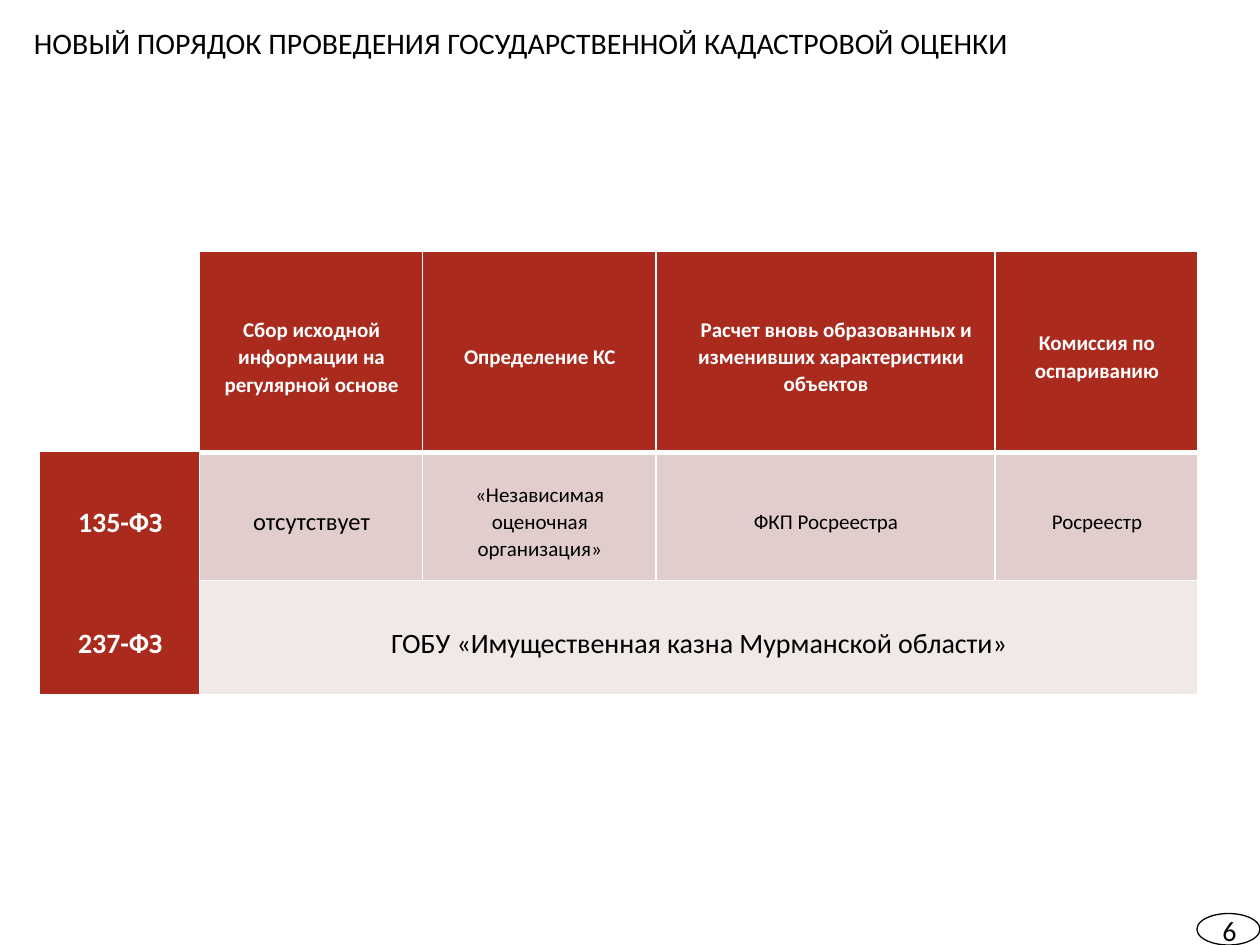
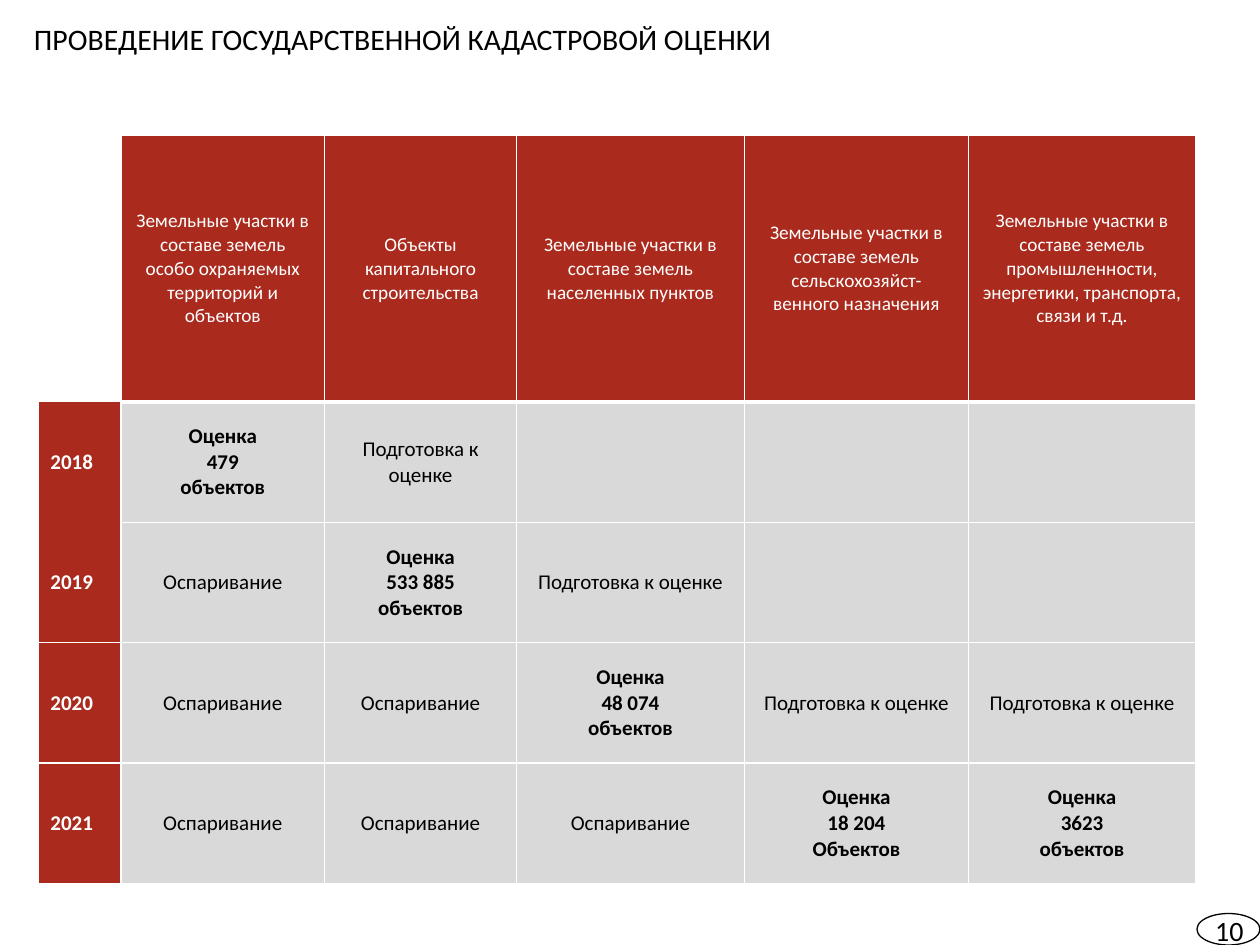
"""Build two table slides on the state cadastral valuation."""
from dataclasses import dataclass

from lxml.etree import SubElement
from pptx import Presentation
from pptx.dml.color import RGBColor
from pptx.enum.shapes import MSO_SHAPE
from pptx.enum.text import MSO_ANCHOR, MSO_AUTO_SIZE, PP_ALIGN
from pptx.oxml import parse_xml
from pptx.oxml.ns import nsdecls, qn
from pptx.util import Pt

PLAIN_TABLE_STYLE = "{2D5ABB26-0587-4C30-8999-92F81FD0307C}"


@dataclass(frozen=True)
class Theme:
    font: str = "Calibri"
    ink: str = "000000"
    paper: str = "FFFFFF"
    accent: str = "AA2B1E"
    rose: str = "E2CDCD"
    pale_rose: str = "F1E8E8"
    gray: str = "D9D9D9"
    title: int = 17
    number: int = 16
    large: int = 16
    medium: int = 14
    body: int = 12
    small: int = 11


@dataclass(frozen=True)
class CellStyle:
    fill: str
    color: str
    size: int
    bold: bool = False
    align: PP_ALIGN = PP_ALIGN.CENTER


class SlideBuilder:
    def __init__(self, deck, theme):
        self.deck = deck
        self.theme = theme
        self.page = None

    def format_text(self, frame, size, color, bold=False, align=PP_ALIGN.CENTER, spacing=None):
        for para in frame.paragraphs:
            para.alignment = align
            if spacing:
                para.line_spacing = spacing
            for span in para.runs:
                span.font.name = self.theme.font
                span.font.size = Pt(size)
                span.font.bold = bold
                span.font.color.rgb = RGBColor.from_string(color)

    def set_margins(self, target, margins):
        left, top, right, bottom = (Pt(margin) for margin in margins)
        target.margin_left, target.margin_top = left, top
        target.margin_right, target.margin_bottom = right, bottom

    def add_page(self, title, title_top, number):
        self.page = self.deck.slides.add_slide(self.deck.slide_layouts[5])
        box = self.page.shapes.title
        box.left, box.top, box.width, box.height = Pt(19.4), Pt(title_top), Pt(606), Pt(25.2)
        frame = box.text_frame
        frame.text = title
        frame.auto_size = MSO_AUTO_SIZE.NONE
        frame.vertical_anchor = MSO_ANCHOR.BOTTOM
        self.set_margins(frame, (0, 3.6, 0, 0))
        self.format_text(frame, self.theme.title, self.theme.ink, align=PP_ALIGN.LEFT)
        self.add_number(number)

    def add_number(self, number):
        oval = self.page.shapes.add_shape(MSO_SHAPE.OVAL, Pt(684), Pt(522), Pt(36), Pt(18))
        oval.shadow.inherit = False
        oval.fill.background()
        oval.line.color.rgb = RGBColor.from_string(self.theme.ink)
        oval.line.width = Pt(0.75)
        box = self.page.shapes.add_textbox(Pt(684.5), Pt(521.5), Pt(36), Pt(19.5))
        frame = box.text_frame
        frame.word_wrap = True
        frame.text = str(number)
        frame.vertical_anchor = MSO_ANCHOR.BOTTOM
        self.set_margins(frame, (0, 0, 0, 0))
        self.format_text(frame, self.theme.number, self.theme.ink)

    def add_table(self, left, top, widths, heights):
        frame = self.page.shapes.add_table(
            len(heights), len(widths), Pt(left), Pt(top), Pt(sum(widths)), Pt(sum(heights)))
        table = frame.table
        table.first_row = table.horz_banding = False
        properties = table._tbl.tblPr
        style = properties.find(qn("a:tableStyleId"))
        if style is None:
            style = SubElement(properties, qn("a:tableStyleId"))
        style.text = PLAIN_TABLE_STYLE
        for column, width in zip(table.columns, widths):
            column.width = Pt(width)
        for row, height in zip(table.rows, heights):
            row.height = Pt(height)
        return table

    def border(self, cell, edges):
        properties = cell._tc.get_or_add_tcPr()
        for index, (edge, width) in enumerate(edges.items()):
            properties.insert(index, parse_xml(
                f'<a:ln{edge} {nsdecls("a")} w="{Pt(width)}"><a:solidFill>'
                f'<a:srgbClr val="{self.theme.paper}"/></a:solidFill></a:ln{edge}>'))

    def fill_table(self, table, rows, style_of, margins, spacing=None):
        for row, texts in enumerate(rows):
            for column, text in enumerate(texts):
                if row == column == 0:
                    continue
                cell = table.cell(row, column)
                style = style_of(row, column, text)
                cell.text_frame.text = text
                cell.vertical_anchor = MSO_ANCHOR.MIDDLE
                self.set_margins(cell, margins)
                cell.fill.solid()
                cell.fill.fore_color.rgb = RGBColor.from_string(style.fill)
                self.format_text(cell.text_frame, style.size, style.color,
                                 style.bold, style.align, spacing)
                edges = {"L": 1, "R": 1, "T": 3 if row == 1 else 1, "B": 3 if row == 0 else 1}
                if column == 0 and row in (1, 2):
                    del edges["B" if row == 1 else "T"]
                if column == 0 and row == 1:
                    del edges["T"]
                self.border(cell, edges)


def add_procedure_slide(builder):
    theme = builder.theme
    builder.add_page("НОВЫЙ ПОРЯДОК ПРОВЕДЕНИЯ ГОСУДАРСТВЕННОЙ КАДАСТРОВОЙ ОЦЕНКИ", 9.5, 6)
    rows = [
        ["", "Сбор исходной информации на регулярной основе", "Определение КС",
         "Расчет вновь образованных и изменивших характеристики\nобъектов",
         "Комиссия по оспариванию"],
        ["135-ФЗ", "отсутствует", "«Независимая оценочная организация»",
         "ФКП Росреестра", "Росреестр"],
        ["237-ФЗ", "ГОБУ «Имущественная казна Мурманской области»"],
    ]

    def style_of(row, column, text):
        if row == 0 or column == 0:
            size = theme.body if row == 0 else theme.large
            return CellStyle(theme.accent, theme.paper, size, True)
        if row == 2:
            return CellStyle(theme.pale_rose, theme.ink, theme.large)
        return CellStyle(theme.rose, theme.ink, theme.medium if column == 1 else theme.body)

    table = builder.add_table(22.6, 143.3, [91.4, 127.4, 133.4, 193.7, 116], [115.2, 73.2, 65.2])
    table.cell(2, 1).merge(table.cell(2, 4))
    builder.fill_table(table, rows, style_of, (8, 5.8, 7.2, 0), 1.07)
    para = table.cell(0, 3).text_frame.paragraphs[0]
    para.line_spacing = 1.05
    properties = para._p.get_or_add_pPr()
    for name in ("marL", "indent"):
        properties.set(name, str(Pt(6)))


def add_schedule_slide(builder):
    theme = builder.theme
    builder.add_page("ПРОВЕДЕНИЕ ГОСУДАРСТВЕННОЙ КАДАСТРОВОЙ ОЦЕНКИ", 7.2, 10)
    land = "Земельные участки в составе земель"
    dispute, prepare, value = "Оспаривание", "Подготовка к оценке", "Оценка"
    rows = [
        ["", f"{land} особо охраняемых территорий и объектов",
         "Объекты капитального строительства", f"{land} населенных пунктов",
         f"{land} сельскохозяйст-\nвенного назначения",
         f"{land} промышленности, энергетики, транспорта, связи и т.д."],
        ["2018", f"{value}\n479\nобъектов", prepare, "", "", ""],
        ["2019", dispute, f"{value}\n533 885\nобъектов", prepare, "", ""],
        ["2020", dispute, dispute, f"{value}\n48 074\nобъектов", prepare, prepare],
        ["2021", dispute, dispute, dispute, f"{value}\n18 204\nОбъектов",
         f"{value}\n3623\nобъектов"],
    ]

    def style_of(row, column, text):
        if row == 0:
            return CellStyle(theme.accent, theme.paper, theme.small)
        if column == 0:
            return CellStyle(theme.accent, theme.paper, theme.body, True, PP_ALIGN.LEFT)
        return CellStyle(theme.gray, theme.ink, theme.body, text.startswith(value))

    table = builder.add_table(
        21.6, 77.3, [47.5, 116.5, 109.6, 130.3, 128, 129.8], [152.4] + [68.8] * 4)
    builder.fill_table(table, rows, style_of, (7.2, 3.6, 7.2, 3.6))


def main():
    deck = Presentation()
    deck.slide_width, deck.slide_height = Pt(720), Pt(540)
    builder = SlideBuilder(deck, Theme())
    add_procedure_slide(builder)
    add_schedule_slide(builder)
    deck.save("out.pptx")


if __name__ == "__main__":
    main()
